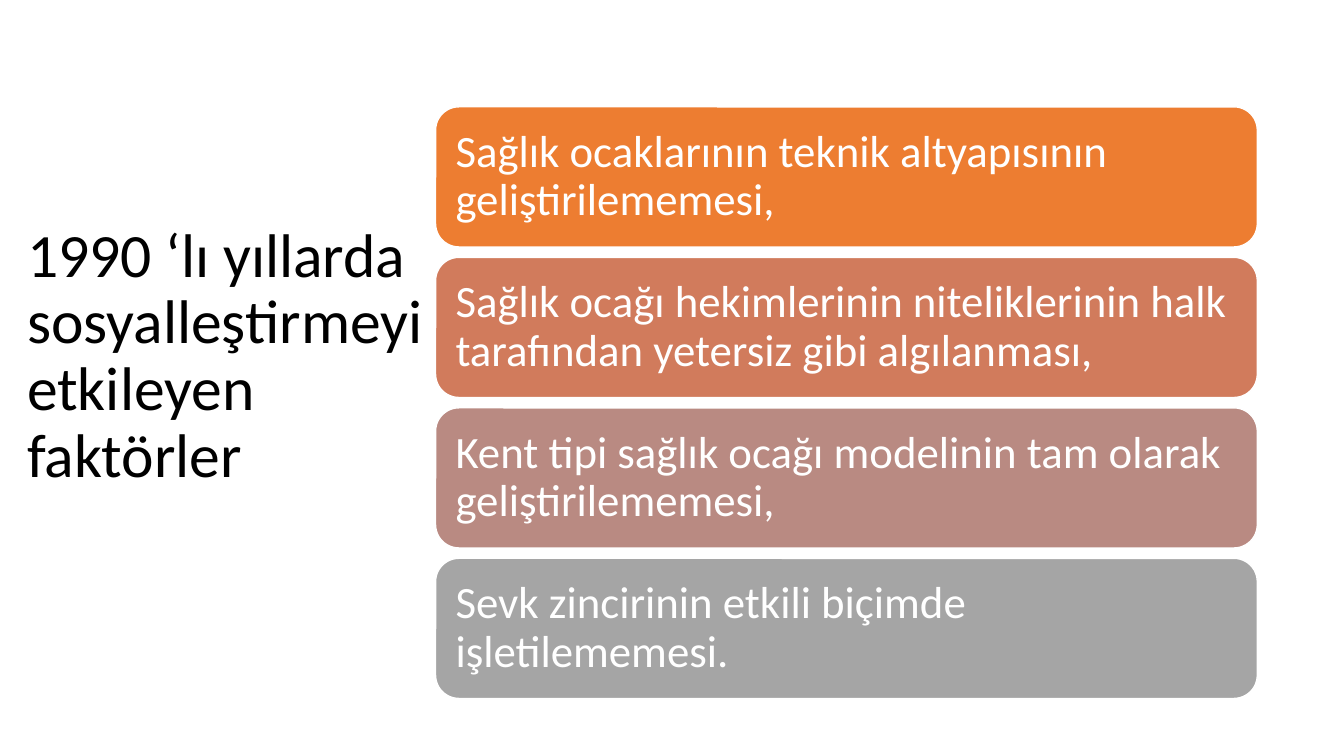
from pptx import Presentation, util as u
from pptx.dml.color import RGBColor
from pptx.enum import shapes, text

TITLE = "1990 ‘lı yıllarda\vsosyalleştirmeyi etkileyen faktörler"
FACTORS = [
    ("Sağlık ocaklarının teknik altyapısının geliştirilememesi,", "ED7D31"),
    ("Sağlık ocağı hekimlerinin niteliklerinin halk tarafından yetersiz gibi algılanması,", "D17B5C"),
    ("Kent tipi sağlık ocağı modelinin tam olarak geliştirilememesi,", "B98A82"),
    ("Sevk zincirinin etkili biçimde işletilememesi.", "A5A5A5"),
]
THEME = {"font": "Calibri", "title": 44, "body": 32, "dark": "000000", "light": "FFFFFF"}

LEFT, TOP, WIDTH, HEIGHT = 4.32, 1.06, 8.15, 1.39
PITCH = 1.493


def write(sp, content, size, color, inset_x=0.1, inset_y=0.05):
    tf = sp.text_frame
    tf.word_wrap = True
    tf.vertical_anchor = text.MSO_ANCHOR.MIDDLE
    tf.margin_left = tf.margin_right = u.Inches(inset_x)
    tf.margin_top = tf.margin_bottom = u.Inches(inset_y)
    p = tf.paragraphs[0]
    p.text = content
    p.alignment = text.PP_ALIGN.LEFT
    p.line_spacing = 0.9
    for r in p.runs:
        r.font.name = THEME["font"]
        r.font.size = u.Pt(size)
        r.font.color.rgb = RGBColor.from_string(color)


def add_factor(s, row, content, fill):
    sp = s.shapes.add_shape(
        shapes.MSO_SHAPE.ROUNDED_RECTANGLE,
        u.Inches(LEFT), u.Inches(TOP + row * PITCH), u.Inches(WIDTH), u.Inches(HEIGHT))
    sp.shadow.inherit = False
    sp.fill.solid()
    sp.fill.fore_color.rgb = RGBColor.from_string(fill)
    sp.line.color.rgb = RGBColor.from_string(THEME["light"])
    sp.line.width = u.Pt(1)
    write(sp, content, THEME["body"], THEME["light"], inset_x=0.13, inset_y=0.13)


def main():
    prs = Presentation()
    prs.slide_width, prs.slide_height = u.Inches(13.33), u.Inches(7.5)
    s = prs.slides.add_slide(prs.slide_layouts[6])
    title = s.shapes.add_textbox(u.Inches(0.17), u.Inches(1.41), u.Inches(4.16), u.Inches(4.27))
    write(title, TITLE, THEME["title"], THEME["dark"])
    for row, (content, fill) in enumerate(FACTORS):
        add_factor(s, row, content, fill)
    prs.save("out.pptx")


if __name__ == "__main__":
    main()
